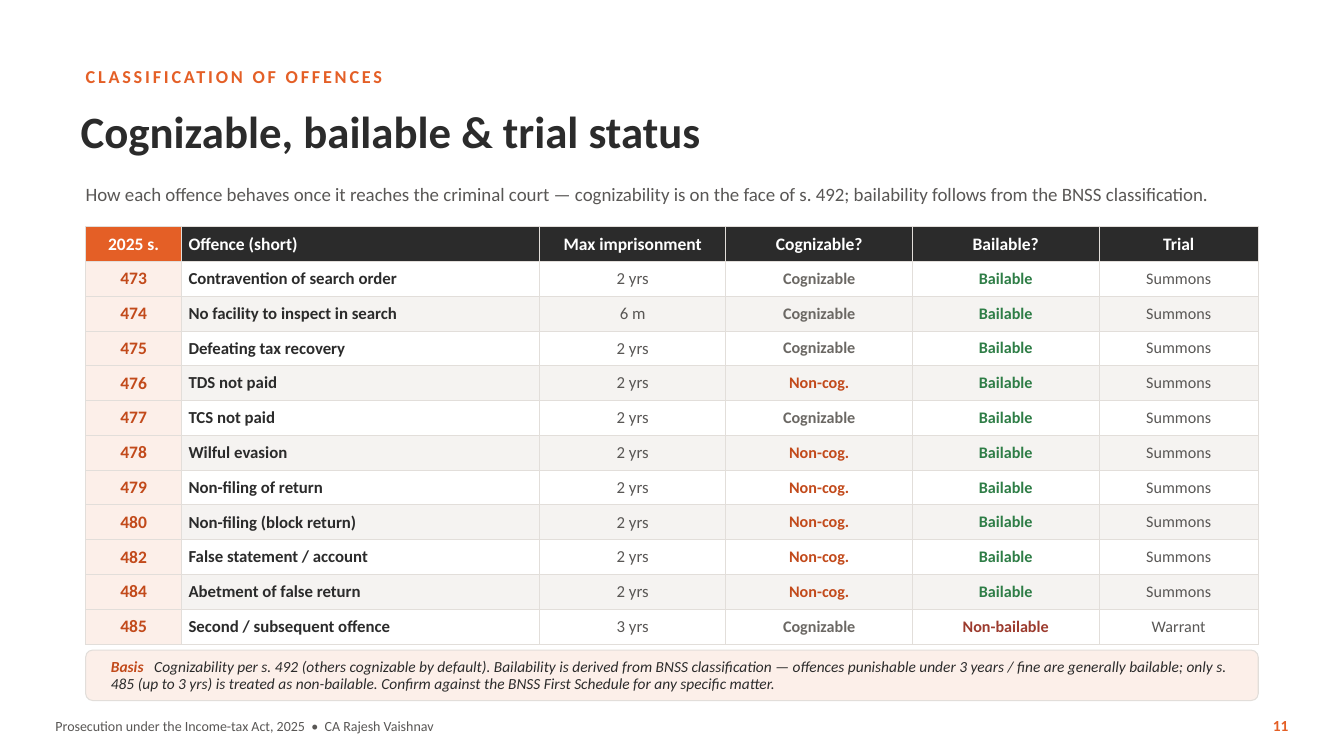
from lxml import etree
from pptx import Presentation
from pptx.dml.color import RGBColor
from pptx.enum.shapes import MSO_SHAPE
from pptx.enum.text import MSO_ANCHOR, MSO_AUTO_SIZE, PP_ALIGN
from pptx.oxml.ns import qn
from pptx.util import Inches, Pt

LEFT, MID, RIGHT = PP_ALIGN.LEFT, PP_ALIGN.CENTER, PP_ALIGN.RIGHT
CENTRE = MSO_ANCHOR.MIDDLE
ROUND = MSO_SHAPE.ROUNDED_RECTANGLE
FIXED = MSO_AUTO_SIZE.NONE

ORANGE, RUST, PALE = "E45F26", "C24A1B", "FCEFE9"
DARK, GREY, EDGE = "2B2B2B", "595755", "E2DEDA"
WHITE, BAND = "FFFFFF", "F5F3F1"

KICKER = "CLASSIFICATION OF OFFENCES"
TITLE = "Cognizable, bailable & trial status"
INTRO = ("How each offence behaves once it reaches the criminal court — cognizability "
         "is on the face of s. 492; bailability follows from the BNSS classification.")
BASIS = ("Cognizability per s. 492 (others cognizable by default). Bailability is derived "
         "from BNSS classification — offences punishable under 3 years / fine are generally "
         "bailable; only s. 485 (up to 3 yrs) is treated as non-bailable. Confirm against "
         "the BNSS First Schedule for any specific matter.")
FOOTER = "Prosecution under the Income-tax Act, 2025  •  CA Rajesh Vaishnav"
PAGE = "11"

HEADS = ["2025 s.", "Offence (short)", "Max imprisonment", "Cognizable?", "Bailable?", "Trial"]
WIDTHS = [0.95, 3.55, 1.85, 1.85, 1.85, 1.58]
ROWS = [
    ("473", "Contravention of search order", "2 yrs", "Cognizable", "Bailable", "Summons"),
    ("474", "No facility to inspect in search", "6 m", "Cognizable", "Bailable", "Summons"),
    ("475", "Defeating tax recovery", "2 yrs", "Cognizable", "Bailable", "Summons"),
    ("476", "TDS not paid", "2 yrs", "Non-cog.", "Bailable", "Summons"),
    ("477", "TCS not paid", "2 yrs", "Cognizable", "Bailable", "Summons"),
    ("478", "Wilful evasion", "2 yrs", "Non-cog.", "Bailable", "Summons"),
    ("479", "Non-filing of return", "2 yrs", "Non-cog.", "Bailable", "Summons"),
    ("480", "Non-filing (block return)", "2 yrs", "Non-cog.", "Bailable", "Summons"),
    ("482", "False statement / account", "2 yrs", "Non-cog.", "Bailable", "Summons"),
    ("484", "Abetment of false return", "2 yrs", "Non-cog.", "Bailable", "Summons"),
    ("485", "Second / subsequent offence", "3 yrs", "Cognizable", "Non-bailable", "Warrant"),
]
STYLES = [(12.5, RUST, True), (12, DARK, True), (12, GREY, False),
          (11.5, GREY, True), (11.5, GREY, True), (11.5, GREY, False)]
STATUS = {"Cognizable": "6B6864", "Non-cog.": RUST,
          "Bailable": "2E7D46", "Non-bailable": "9C3B2E"}

EDGE_X, TABLE_Y, TABLE_H = 0.85, 2.25, 4.14


def rgb(code):
    return RGBColor.from_string(code)


def paint(part, code):
    part.fill.solid()
    part.fill.fore_color.rgb = rgb(code)


def style(para, size, color, bold=False, align=LEFT):
    para.alignment = align
    font = para.font
    font.name, font.size, font.bold = "Calibri", Pt(size), bold
    font.color.rgb = rgb(color)


def frame(shape):
    body = shape.text_frame
    body.word_wrap, body.auto_size = True, FIXED
    body.vertical_anchor = CENTRE
    body.margin_left = body.margin_right = body.margin_top = body.margin_bottom = 0
    return body.paragraphs[0]


def label(slide, place, text, *look):
    para = frame(slide.shapes.add_textbox(*map(Inches, place)))
    para.text = text
    style(para, *look)
    return para


def border(cell):
    props = cell._tc.get_or_add_tcPr()
    for i, side in enumerate(("lnL", "lnR", "lnT", "lnB")):
        line = etree.Element(qn("a:" + side), w=str(Pt(0.75)))
        fill = etree.SubElement(line, qn("a:solidFill"))
        etree.SubElement(fill, qn("a:srgbClr"), val=EDGE)
        props.insert(i, line)


def fill_cell(cell, text, back, look, align):
    cell.text = text
    cell.vertical_anchor = CENTRE
    cell.margin_left = cell.margin_right = Inches(0.07)
    cell.margin_top = cell.margin_bottom = Inches(0.03)
    style(cell.text_frame.paragraphs[0], *look, align)
    paint(cell, back)
    border(cell)


def add_grid(slide):
    count = len(ROWS) + 1
    place = map(Inches, (EDGE_X, TABLE_Y, sum(WIDTHS), TABLE_H))
    grid = slide.shapes.add_table(count, len(HEADS), *place).table
    for row in grid.rows:
        row.height = Inches(TABLE_H / count)
    for c, width in enumerate(WIDTHS):
        grid.columns[c].width = Inches(width)
        align = LEFT if c == 1 else MID
        back = DARK if c else ORANGE
        fill_cell(grid.cell(0, c), HEADS[c], back, (12.5, WHITE, True), align)
        size, color, bold = STYLES[c]
        for r, row in enumerate(ROWS, 1):
            back = PALE if c == 0 else WHITE if r % 2 else BAND
            look = (size, STATUS.get(row[c], color), bold)
            fill_cell(grid.cell(r, c), row[c], back, look, align)


def add_note(slide):
    top, height = 6.45, 0.5
    card = slide.shapes.add_shape(ROUND, *map(Inches, (EDGE_X, top, sum(WIDTHS), height)))
    card.adjustments[0] = 0.14
    card.shadow.inherit = False
    paint(card, PALE)
    card.line.color.rgb, card.line.width = rgb(EDGE), Pt(0.75)

    para = frame(slide.shapes.add_textbox(*map(Inches, (1.1, top, 11.1, height))))
    para.line_spacing = Pt(12.5)
    tabs = etree.SubElement(para._p.get_or_add_pPr(), qn("a:tabLst"))
    etree.SubElement(tabs, qn("a:tab"), pos=str(Inches(0.43)), algn="l")
    style(para, 11, DARK)
    para.font.italic = True
    lead = para.add_run()
    lead.text = "Basis\t"
    lead.font.bold = True
    lead.font.color.rgb = rgb(RUST)
    para.add_run().text = BASIS


def main():
    deck = Presentation()
    deck.slide_width, deck.slide_height = Inches(13.33), Inches(7.5)
    slide = deck.slides.add_slide(deck.slide_layouts[5])

    title = slide.shapes.title
    title.left, title.top, title.width, title.height = map(Inches, (0.8, 0.95, 12, 0.7))
    para = frame(title)
    para.text = TITLE
    style(para, 32, DARK, True)

    kicker = label(slide, (EDGE_X, 0.6, 11, 0.32), KICKER, 13, ORANGE, True)
    kicker.font._element.set("spc", "200")
    intro = label(slide, (EDGE_X, 1.66, 11.7, 0.5), INTRO, 13.5, GREY)
    intro.line_spacing = Pt(18)
    add_grid(slide)
    add_note(slide)
    label(slide, (0.55, 7.05, 9, 0.3), FOOTER, 10, GREY)
    label(slide, (12.33, 7.05, 0.45, 0.3), PAGE, 11, ORANGE, True, RIGHT)
    deck.save("out.pptx")


if __name__ == "__main__":
    main()
